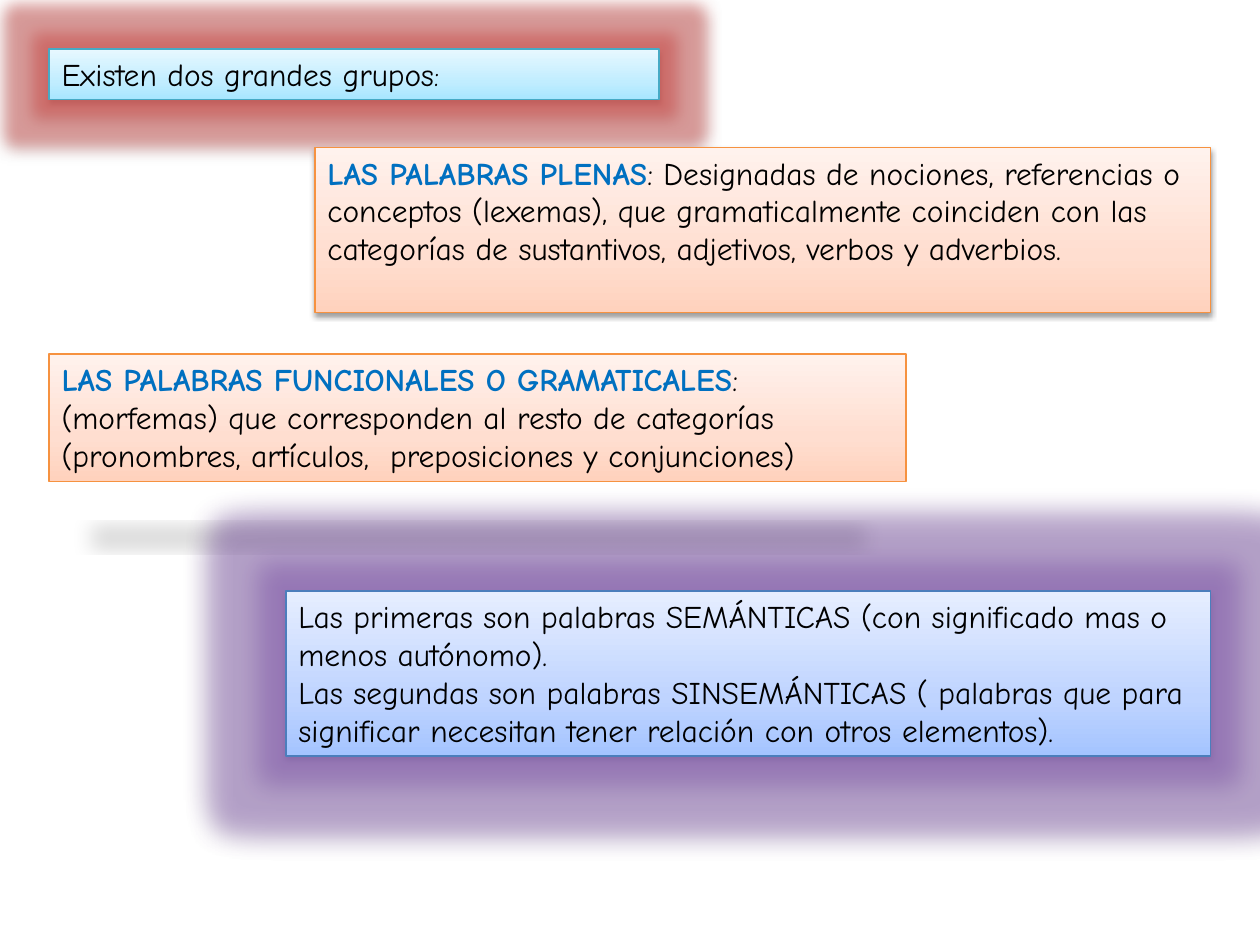
import pptx
import pptx.util
import pptx.dml.color
import pptx.enum.shapes
import pptx.enum.text
import pptx.oxml.ns
from lxml import etree

FONT = "Comic Neue"
BLACK, BLUE = "000000", "0070C0"
LEFT, RIGHT = 0.39, 9.61  # shared page margins

# Gradient colours run from the bottom edge to the top edge
CYAN = ("A7E6FF", "C1EDFF", "E7F8FF")
ORANGE = ("FFD2BD", "FFDED0", "FFF2ED")
PALE_BLUE = ("A4C4FF", "BFD4FF", "E6EEFF")
STOPS = (0, 35, 100)

# Blur, distance, opacity and horizontal/vertical scale
SOFT_SHADOW = dict(blur=3.1, dist=1.6, alpha=38)
CAST_SHADOW = dict(blur=12, dist=25, alpha=15, sx=90, sy=-19)


def rgb(value):
    return pptx.dml.color.RGBColor.from_string(value)


def add_xml(parent, tag, **attrs):
    child = etree.SubElement(parent, pptx.oxml.ns.qn(tag))
    for name, value in attrs.items():
        child.set(name, str(value))
    return child


def add_color(parent, color, alpha=100):
    clr = add_xml(parent, "a:srgbClr", val=color)
    if alpha < 100:
        add_xml(clr, "a:alpha", val=alpha * 1000)


def set_gradient(sp, colors):
    sp.fill.gradient()
    sp.fill.gradient_angle = 90
    stops = sp._element.spPr.find(".//" + pptx.oxml.ns.qn("a:gsLst"))
    for stop in list(stops):
        stops.remove(stop)
    for pos, color in zip(STOPS, colors):
        add_color(add_xml(stops, "a:gs", pos=pos * 1000), color)


def set_effects(sp, shadow, glow=None):
    sp.shadow.inherit = False
    effects = sp._element.spPr.find(pptx.oxml.ns.qn("a:effectLst"))
    if glow:
        color, radius = glow
        add_color(add_xml(effects, "a:glow", rad=pptx.util.Pt(radius)), color, 40)
    outer = add_xml(effects, "a:outerShdw", blurRad=pptx.util.Pt(shadow["blur"]),
                    dist=pptx.util.Pt(shadow["dist"]), dir=5400000)
    for name in ("sx", "sy"):
        if name in shadow:
            outer.set(name, str(shadow[name] * 1000))
    outer.set("rotWithShape", "0")
    add_color(outer, BLACK, shadow["alpha"])


def add_run(p, text, size=18, color=BLACK, bold=False):
    r = p.add_run()
    r.text = text
    r.font.name = FONT
    r.font.size = pptx.util.Pt(size)
    r.font.bold = bold
    r.font.color.rgb = rgb(color)


def add_box(s, left, top, width, height, colors, line, paragraphs,
            shadow=SOFT_SHADOW, glow=None):
    sp = s.shapes.add_shape(pptx.enum.shapes.MSO_SHAPE.RECTANGLE,
                            *map(pptx.util.Inches, (left, top, width, height)))
    set_gradient(sp, colors)
    sp.line.color.rgb = rgb(line)
    sp.line.width = pptx.util.Pt(0.75)
    set_effects(sp, shadow, glow)
    tf = sp.text_frame
    tf.word_wrap = True
    tf.vertical_anchor = pptx.enum.text.MSO_ANCHOR.TOP
    for i, runs in enumerate(paragraphs):
        p = tf.add_paragraph() if i else tf.paragraphs[0]
        p.alignment = pptx.enum.text.PP_ALIGN.LEFT
        for text, style in runs:
            add_run(p, text, **style)


def main():
    prs = pptx.Presentation()
    prs.slide_width = pptx.util.Inches(10)
    prs.slide_height = pptx.util.Inches(7.5)
    s = prs.slides.add_slide(prs.slide_layouts[6])
    heading = dict(color=BLUE, bold=True)

    # Introduction
    add_box(s, LEFT, 0.39, 4.84, 0.4, CYAN, "46AAC5",
            [[("Existen dos grandes grupos", {}), (":", dict(size=16))]],
            glow=("D53E3A", 18))

    # The two groups of words
    add_box(s, 2.5, 1.17, RIGHT - 2.5, 1.31, ORANGE, "F69240",
            [[("LAS PALABRAS PLENAS", heading),
              (": Designadas de nociones, referencias o conceptos (lexemas), "
               "que gramaticalmente coinciden con las categorías de "
               "sustantivos, adjetivos, verbos y adverbios.", {})]])
    add_box(s, LEFT, 2.81, 6.8, 1.01, ORANGE, "F69240",
            [[("LAS PALABRAS FUNCIONALES O GRAMATICALES", heading),
              (": (morfemas) que corresponden al resto de categorías "
               "(pronombres, artículos,  preposiciones y conjunciones)", {})]],
            shadow=CAST_SHADOW)

    # Comparison of both groups
    add_box(s, 2.27, 4.69, RIGHT - 2.27, 1.31, PALE_BLUE, "4B7EBC",
            [[("Las primeras son palabras SEMÁNTICAS (con significado mas o "
               "menos autónomo).", {})],
             [("Las segundas son palabras SINSEMÁNTICAS ( palabras que para "
               "significar necesitan tener relación con otros elementos).", {})]],
            glow=("7F4FB0", 31))

    prs.save("out.pptx")


if __name__ == "__main__":
    main()
